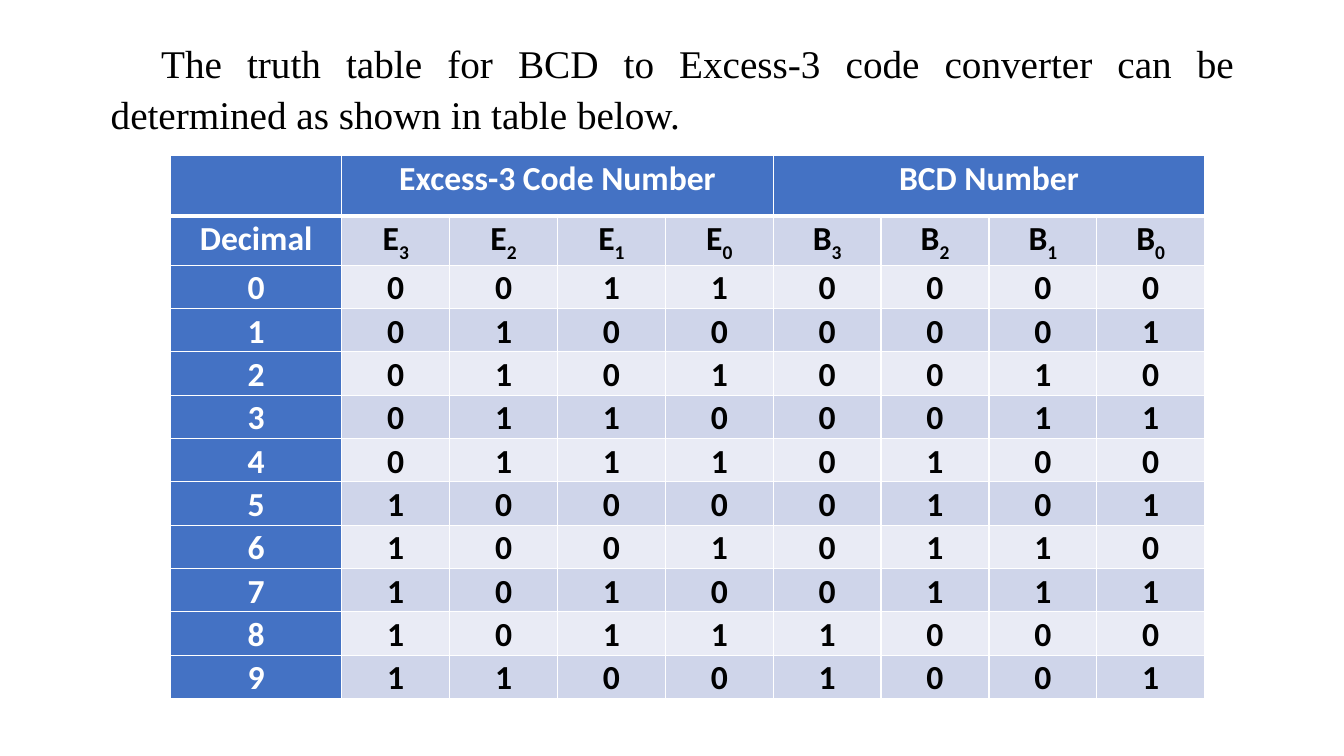
from lxml.etree import SubElement
from pptx import Presentation
from pptx.dml.color import RGBColor
from pptx.enum.text import MSO_AUTO_SIZE, PP_ALIGN
from pptx.oxml.ns import qn
from pptx.util import Inches, Pt

INTRO = "The truth table for BCD to Excess-3 code converter can be determined as shown in table below."
GROUPS = ["Excess-3 Code Number", "BCD Number"]
CORNER = "Decimal"
BITS = ["E3", "E2", "E1", "E0", "B3", "B2", "B1", "B0"]
TRUTH_ROWS = [
    ("0", "0011", "0000"),
    ("1", "0100", "0001"),
    ("2", "0101", "0010"),
    ("3", "0110", "0011"),
    ("4", "0111", "0100"),
    ("5", "1000", "0101"),
    ("6", "1001", "0110"),
    ("7", "1010", "0111"),
    ("8", "1011", "1000"),
    ("9", "1100", "1001"),
]

BLUE = RGBColor(0x44, 0x72, 0xC4)
DARK_BAND = RGBColor(0xCF, 0xD5, 0xEA)
LIGHT_BAND = RGBColor(0xE9, 0xEB, 0xF5)
WHITE = RGBColor(0xFF, 0xFF, 0xFF)
BLACK = RGBColor(0, 0, 0)

GROUP_SIZE = 4
COLUMN_WIDTHS = [1.7] + [1.07] * len(BITS)
ROW_HEIGHTS = [0.6, 0.49] + [0.43] * len(TRUTH_ROWS)


def add_span(para, text, font_name, size, color, bold=False):
    span = para.add_run()
    span.text = text
    span.font.name = font_name
    span.font.size = Pt(size)
    span.font.bold = bold
    span.font.color.rgb = color
    return span


def add_intro(page):
    box = page.shapes.add_textbox(Inches(1), Inches(0.31), Inches(11.34), Inches(1.08))
    frame = box.text_frame
    frame.word_wrap = True
    frame.auto_size = MSO_AUTO_SIZE.SHAPE_TO_FIT_TEXT
    para = frame.paragraphs[0]
    para.alignment = PP_ALIGN.JUSTIFY
    para.line_spacing = 1.07
    para.space_after = Pt(8)
    para._p.get_or_add_pPr().set("indent", str(Inches(0.5)))
    add_span(para, INTRO, "Times New Roman", 28, BLACK)


def style_cell(cell, fill, top, bottom):
    properties = cell._tc.get_or_add_tcPr()
    for side, points in (("L", 1), ("R", 1), ("T", top), ("B", bottom)):
        line = SubElement(properties, qn(f"a:ln{side}"), w=str(Pt(points)))
        paint = SubElement(line, qn("a:solidFill"))
        SubElement(paint, qn("a:srgbClr"), val=str(WHITE))
    cell.fill.solid()
    cell.fill.fore_color.rgb = fill
    cell.margin_left = cell.margin_right = Inches(0.07)
    cell.margin_top = cell.margin_bottom = 0


def write_cell(cell, text, color, subscript=""):
    para = cell.text_frame.paragraphs[0]
    para.alignment = PP_ALIGN.CENTER
    para.line_spacing = 1.07
    if text:
        add_span(para, text, "Calibri", 24, color, True)
    if subscript:
        span = add_span(para, subscript, "Calibri", 24, color, True)
        span._r.get_or_add_rPr().set("baseline", "-25000")


def add_truth_table(page):
    table = page.shapes.add_table(
        len(ROW_HEIGHTS), len(COLUMN_WIDTHS), Inches(1.69), Inches(1.54),
        Inches(sum(COLUMN_WIDTHS)), Inches(sum(ROW_HEIGHTS))).table
    for column, width in zip(table.columns, COLUMN_WIDTHS):
        column.width = Inches(width)
    for row, height in zip(table.rows, ROW_HEIGHTS):
        row.height = Inches(height)

    for r in range(len(ROW_HEIGHTS)):
        band = DARK_BAND if r % 2 else LIGHT_BAND
        for c in range(len(COLUMN_WIDTHS)):
            fill = BLUE if r == 0 or c == 0 else band
            style_cell(table.cell(r, c), fill, 3 if r == 1 else 1, 3 if r == 0 else 1)

    for index, title in enumerate(GROUPS):
        first = 1 + index * GROUP_SIZE
        table.cell(0, first).merge(table.cell(0, first + GROUP_SIZE - 1))
        write_cell(table.cell(0, first), title, WHITE)

    write_cell(table.cell(1, 0), CORNER, WHITE)
    for c, (letter, digit) in enumerate(BITS, 1):
        write_cell(table.cell(1, c), letter, BLACK, digit)

    for r, (decimal, excess, bcd) in enumerate(TRUTH_ROWS, 2):
        write_cell(table.cell(r, 0), decimal, WHITE)
        for c, bit in enumerate(excess + bcd, 1):
            write_cell(table.cell(r, c), bit, BLACK)


def main():
    deck = Presentation()
    deck.slide_width = Inches(13.33)
    deck.slide_height = Inches(7.5)
    page = deck.slides.add_slide(deck.slide_layouts[6])
    add_intro(page)
    add_truth_table(page)
    deck.save("out.pptx")


if __name__ == "__main__":
    main()
